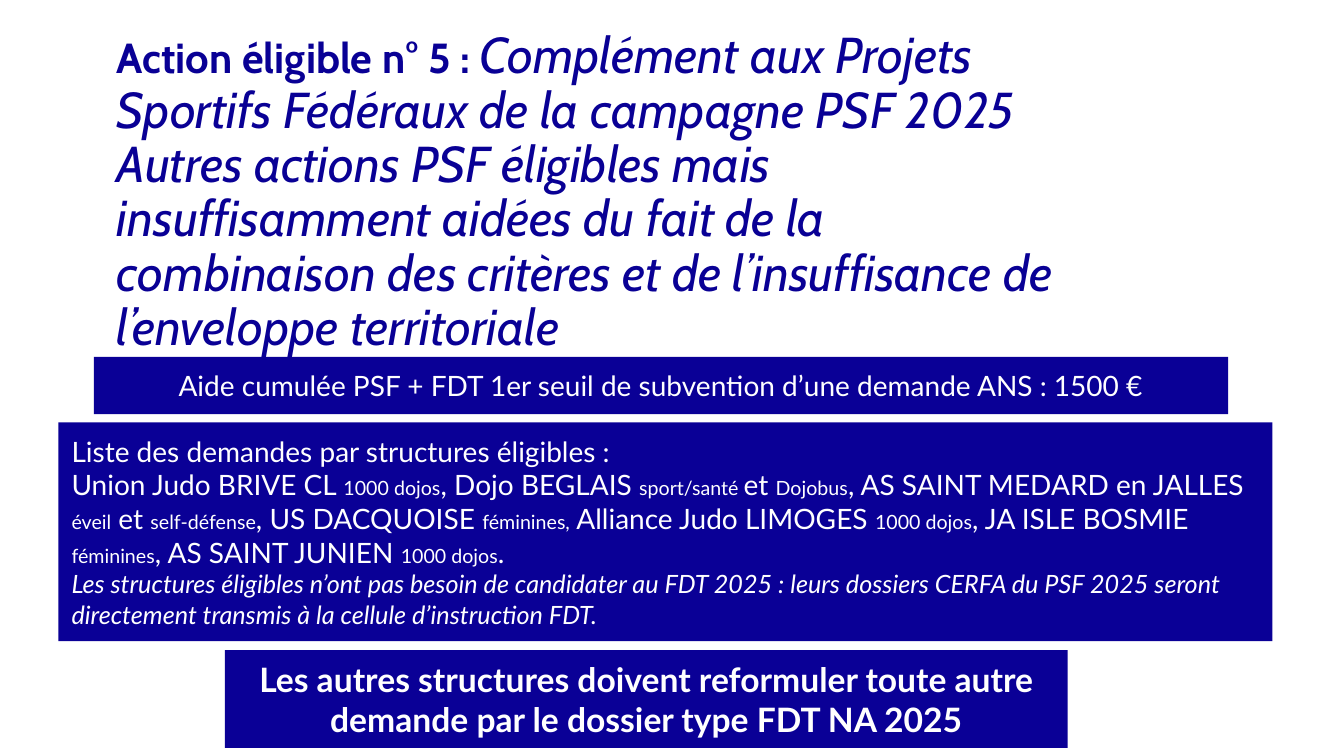
from pptx import Presentation
from pptx import util as u
from pptx.dml.color import RGBColor
from pptx.enum import shapes, text

HUES = {"title": "090095", "band": "0A0096", "light": "FFFFFF"}

CLUBS = [
    ("Union Judo BRIVE CL ", "1000 dojos"),
    (", Dojo BEGLAIS ", "sport/santé "),
    ("et ", "Dojobus"),
    (", AS SAINT MEDARD en JALLES ", "éveil"),
    (" et ", "self-défense"),
    (", US DACQUOISE ", "féminines,"),
    (" Alliance Judo LIMOGES ", "1000 dojos"),
    (", JA ISLE BOSMIE ", "féminines"),
    (", AS SAINT JUNIEN ", "1000 dojos"),
]


class Deck:
    def __init__(self):
        self.show = Presentation()
        self.show.slide_width = u.Inches(13.33)
        self.show.slide_height = u.Inches(7.5)
        self.slide = self.show.slides.add_slide(self.show.slide_layouts[6])

    def run(self, para, words, size, font, hue, bold=False, slant=False):
        run = para.add_run()
        run.text = words
        run.font.size = u.Pt(size)
        run.font.name = font
        run.font.bold = bold
        run.font.italic = slant
        run.font.color.rgb = RGBColor.from_string(HUES[hue])

    def frame(self, shape, pad, anchor):
        frame = shape.text_frame
        frame.word_wrap = True
        frame.vertical_anchor = anchor
        frame.margin_left = frame.margin_right = u.Inches(pad)
        frame.margin_top = frame.margin_bottom = u.Inches(pad)
        return frame

    def title(self, place, lead, lines):
        box = self.slide.shapes.add_textbox(*map(u.Inches, place))
        para = self.frame(box, 0, text.MSO_ANCHOR.BOTTOM).paragraphs[0]
        para.line_spacing = 0.9
        self.run(para, lead, 30, "Cabin", "title", bold=True)
        for n, line in enumerate(lines):
            if n:
                para.add_line_break()
            self.run(para, line, 36, "Cabin", "title", slant=True)

    def band(self, place, paras, align=text.PP_ALIGN.CENTER):
        box = self.slide.shapes.add_shape(
            shapes.MSO_SHAPE.RECTANGLE, *map(u.Inches, place))
        box.shadow.inherit = False
        box.fill.solid()
        box.fill.fore_color.rgb = RGBColor.from_string(HUES["band"])
        box.line.fill.background()
        frame = self.frame(box, 0.13, text.MSO_ANCHOR.MIDDLE)
        for n, runs in enumerate(paras):
            para = frame.add_paragraph() if n else frame.paragraphs[0]
            para.alignment = align
            for words, size, *style in runs:
                self.run(para, words, size, "Lato", "light", *style)


def main():
    deck = Deck()
    deck.title((1.16, 0.24, 9.61, 3.3), "Action éligible n° 5 : ", [
        "Complément aux Projets Sportifs Fédéraux de la campagne PSF 2025",
        "Autres actions PSF éligibles mais insuffisamment aidées du fait de la "
        "combinaison des critères et de l’insuffisance de l’enveloppe territoriale",
    ])
    deck.band((0.93, 3.54, 11.25, 0.57), [[(
        "Aide cumulée PSF + FDT 1er seuil de subvention d’une demande ANS : 1500 €",
        20)]])
    clubs = [run for club, theme in CLUBS for run in ((club, 20), (theme, 14))]
    deck.band((0.58, 4.19, 12.04, 2.17), [
        [("Liste des demandes par structures éligibles :", 20)],
        clubs + [(".", 20)],
        [("Les structures éligibles n’ont pas besoin de candidater au FDT 2025 : "
          "leurs dossiers CERFA du PSF 2025 seront directement transmis à la "
          "cellule d’instruction FDT.", 18, False, True)],
    ], text.PP_ALIGN.LEFT)
    deck.band((2.23, 6.45, 8.36, 0.97), [[(
        "Les autres structures doivent reformuler toute autre demande par le "
        "dossier type FDT NA 2025", 24, True)]])
    deck.show.save("out.pptx")


if __name__ == "__main__":
    main()
